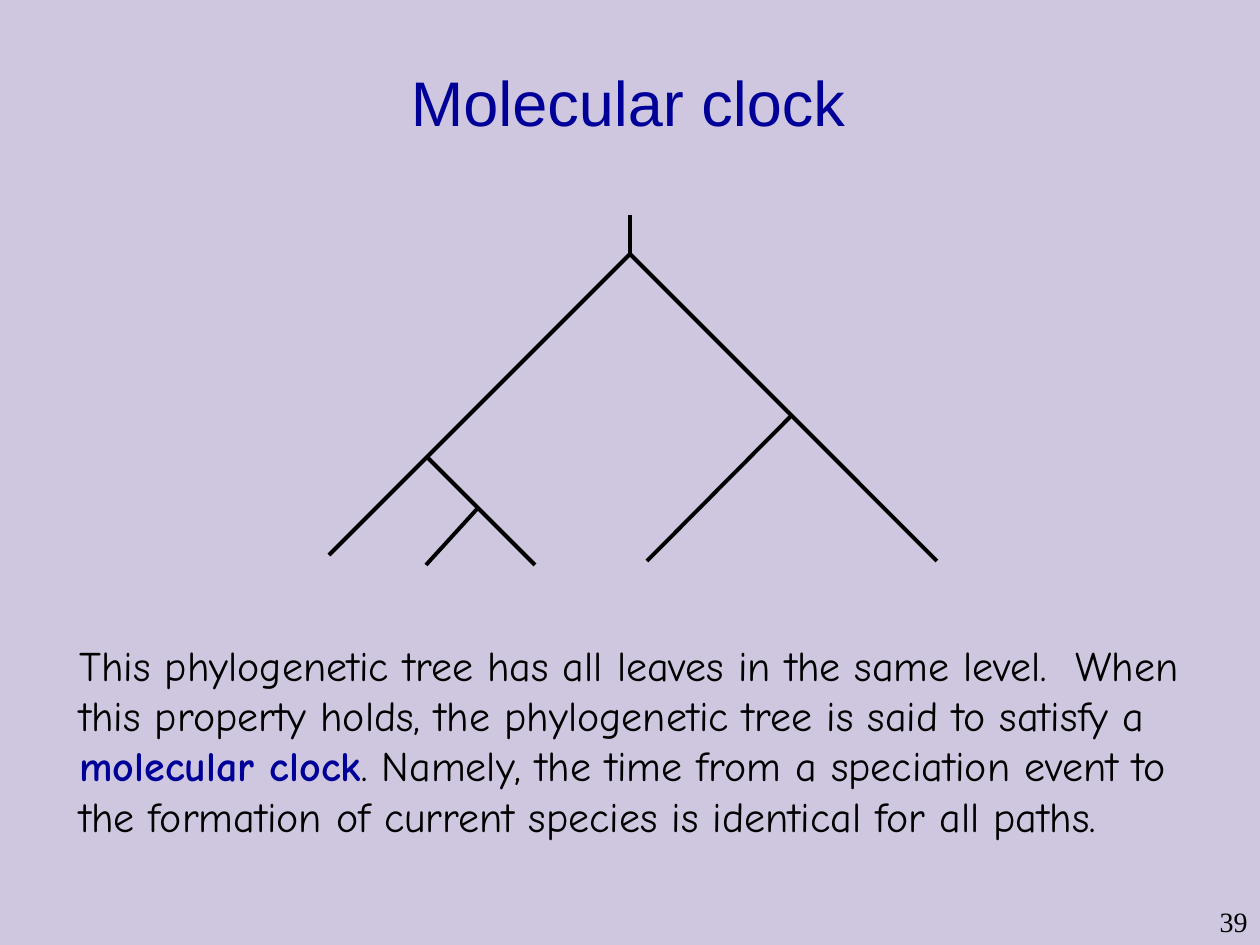
"""Build the slide that explains the molecular clock with a phylogenetic tree."""
from dataclasses import dataclass

from pptx import Presentation
from pptx import util as u
from pptx.dml.color import RGBColor
from pptx.enum import shapes, text
from pptx.oxml.ns import qn
from lxml import etree


@dataclass(frozen=True)
class Theme:
    background: str = "CEC7DF"
    ink: str = "000000"
    accent: str = "000099"
    title_font: str = "Arial"
    body_font: str = "Comic Neue"
    number_font: str = "Times New Roman"
    title_size: int = 36
    body_size: int = 24
    number_size: int = 16
    branch_width: float = 2.25


THEME = Theme()
SLIDE_SIZE = (1260, 945)
TITLE = "Molecular clock"
PAGE_NUMBER = "39"
EXPLANATION = [
    ("This phylogenetic tree has all leaves in the same level.  When this property holds, "
     "the phylogenetic tree is said to satisfy a ", THEME.ink, False),
    ("molecular clock", THEME.accent, True),
    (". Namely, the time from a speciation event to the formation of current species "
     "is identical for all paths.", THEME.ink, False),
]
ROOT = (630, 254)
BRANCHES = [
    ((630, 215), ROOT),
    (ROOT, (329, 555)),
    ((427, 457), (535, 565)),
    ((478, 508), (426, 565)),
    (ROOT, (937, 561)),
    ((791, 416), (647, 561)),
]


def px(length):
    return u.Emu(round(length * 914400 / 126))


def add_text(slide, box, runs, font, size, align, anchor, wrap=True, grow=True):
    label = slide.shapes.add_textbox(*map(px, box))
    frame = label.text_frame
    frame.word_wrap = wrap
    frame.vertical_anchor = anchor
    if grow:
        frame.auto_size = text.MSO_AUTO_SIZE.SHAPE_TO_FIT_TEXT
    paragraph = frame.paragraphs[0]
    paragraph.alignment = align
    for words, colour, bold in runs:
        run = paragraph.add_run()
        run.text = words
        run.font.name = font
        run.font.size = u.Pt(size)
        run.font.bold = bold
        run.font.color.rgb = RGBColor.from_string(colour)


def add_branch(tree, start, end):
    branch = tree.shapes.add_connector(
        shapes.MSO_CONNECTOR.STRAIGHT, *map(px, start + end))
    branch.line.color.rgb = RGBColor.from_string(THEME.ink)
    branch.line.width = u.Pt(THEME.branch_width)
    etree.SubElement(branch._element.spPr, qn("a:effectLst"))


def main():
    deck = Presentation()
    deck.slide_width, deck.slide_height = map(px, SLIDE_SIZE)
    slide = deck.slides.add_slide(deck.slide_layouts[6])
    slide.background.fill.solid()
    slide.background.fill.fore_color.rgb = RGBColor.from_string(THEME.background)

    add_text(slide, (1202, 898, 58, 47), [(PAGE_NUMBER, THEME.ink, False)],
             THEME.number_font, THEME.number_size,
             text.PP_ALIGN.RIGHT, text.MSO_ANCHOR.MIDDLE, wrap=False)
    add_text(slide, (48, 22, 1160, 158), [(TITLE, THEME.accent, False)],
             THEME.title_font, THEME.title_size,
             text.PP_ALIGN.CENTER, text.MSO_ANCHOR.MIDDLE, grow=False)
    tree = slide.shapes.add_group_shape()
    for start, end in BRANCHES:
        add_branch(tree, start, end)
    add_text(slide, (67, 633, 1126, 267), EXPLANATION,
             THEME.body_font, THEME.body_size,
             text.PP_ALIGN.LEFT, text.MSO_ANCHOR.TOP)

    deck.save("out.pptx")


if __name__ == "__main__":
    main()
